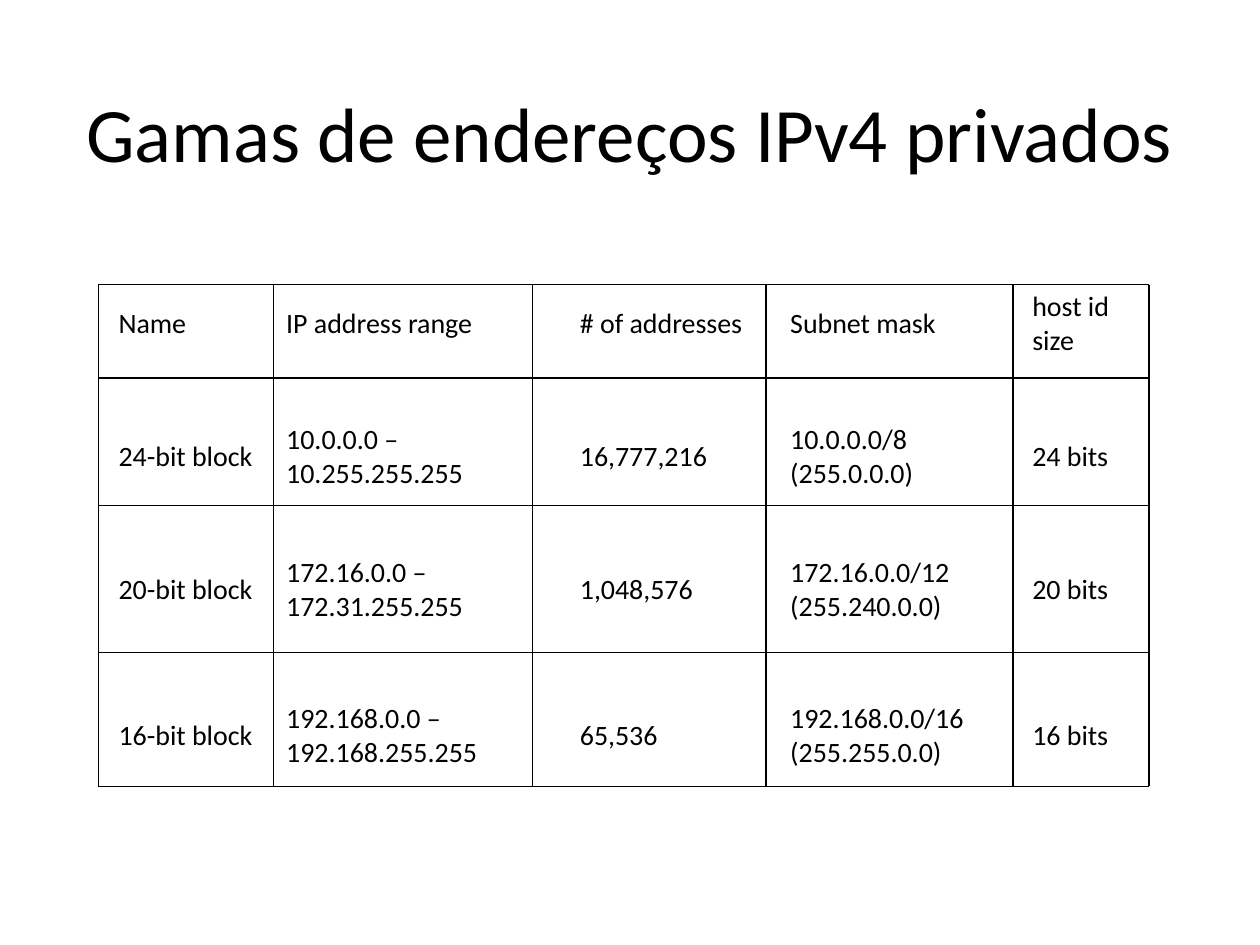
"""Build a slide that lists the private IPv4 address ranges."""
import pptx
import pptx.util
import pptx.dml.color
import pptx.enum.shapes
import pptx.enum.text
from pptx.util import Cm

TITLE = "Gamas de endereços IPv4 privados"
ROWS = [
    ("Name", "IP address range", "# of addresses", "Subnet mask", "host id size"),
    ("24-bit block", "10.0.0.0 – 10.255.255.255", "16,777,216",
     "10.0.0.0/8 (255.0.0.0)", "24 bits"),
    ("20-bit block", "172.16.0.0 – 172.31.255.255", "1,048,576",
     "172.16.0.0/12 (255.240.0.0)", "20 bits"),
    ("16-bit block", "192.168.0.0 – 192.168.255.255", "65,536",
     "192.168.0.0/16 (255.255.0.0)", "16 bits"),
]
WIDTHS = (3.38, 5.92, 4.24, 4.88, 2.74)
HEIGHTS = (2.95, 2.41, 2.95, 2.95)
RULE_X = (1.98, 5.51, 10.74, 15.44, 20.42, 23.16)
RULE_Y = (5.74, 7.62, 10.19, 13.16, 15.85)
THEME = {
    "font": "Calibri",
    "ink": pptx.dml.color.RGBColor(0, 0, 0),
    "title": pptx.util.Pt(44),
    "body": pptx.util.Pt(16),
    "rule": pptx.util.Pt(0.75),
}
MIDDLE = pptx.enum.text.MSO_ANCHOR.MIDDLE


def style(frame, size, align):
    for para in frame.paragraphs:
        para.alignment = align
        for run in para.runs:
            run.font.name = THEME["font"]
            run.font.size = size
            run.font.color.rgb = THEME["ink"]


def add_title(slide):
    title = slide.shapes.title
    title.left, title.top = Cm(1.27), Cm(1.07)
    title.width, title.height = Cm(22.86), Cm(3.18)
    title.text_frame.text = TITLE
    title.text_frame.vertical_anchor = MIDDLE
    style(title.text_frame, THEME["title"], pptx.enum.text.PP_ALIGN.CENTER)


def add_ranges(slide):
    table = slide.shapes.add_table(
        len(ROWS), len(WIDTHS), Cm(2.21), Cm(5.05),
        Cm(sum(WIDTHS)), Cm(sum(HEIGHTS))).table
    table.first_row = table.horz_banding = False
    for col, width in zip(table.columns, WIDTHS):
        col.width = Cm(width)
    for row, height, texts in zip(table.rows, HEIGHTS, ROWS):
        row.height = Cm(height)
        for cell, text in zip(row.cells, texts):
            cell.fill.background()
            cell.margin_left = cell.margin_right = Cm(0.18)
            cell.margin_top = cell.margin_bottom = Cm(0.1)
            cell.vertical_anchor = MIDDLE
            cell.text_frame.text = text
            style(cell.text_frame, THEME["body"], pptx.enum.text.PP_ALIGN.LEFT)


def add_rules(slide):
    left, right, top, low = RULE_X[0], RULE_X[-1], RULE_Y[0], RULE_Y[-1]
    rules = [(x, top, x, low) for x in RULE_X]
    rules += [(left, y, right, y) for y in RULE_Y]
    for ends in rules:
        rule = slide.shapes.add_connector(
            pptx.enum.shapes.MSO_CONNECTOR.STRAIGHT, *map(Cm, ends))
        rule.line.color.rgb = THEME["ink"]
        rule.line.width = THEME["rule"]
        props = rule._element.spPr
        props.append(props.makeelement(pptx.oxml.ns.qn("a:effectLst"), {}))


def main():
    deck = pptx.Presentation()
    deck.slide_width, deck.slide_height = Cm(25.4), Cm(19.05)
    slide = deck.slides.add_slide(deck.slide_layouts[5])
    add_title(slide)
    add_ranges(slide)
    add_rules(slide)
    deck.save("out.pptx")


if __name__ == "__main__":
    main()
